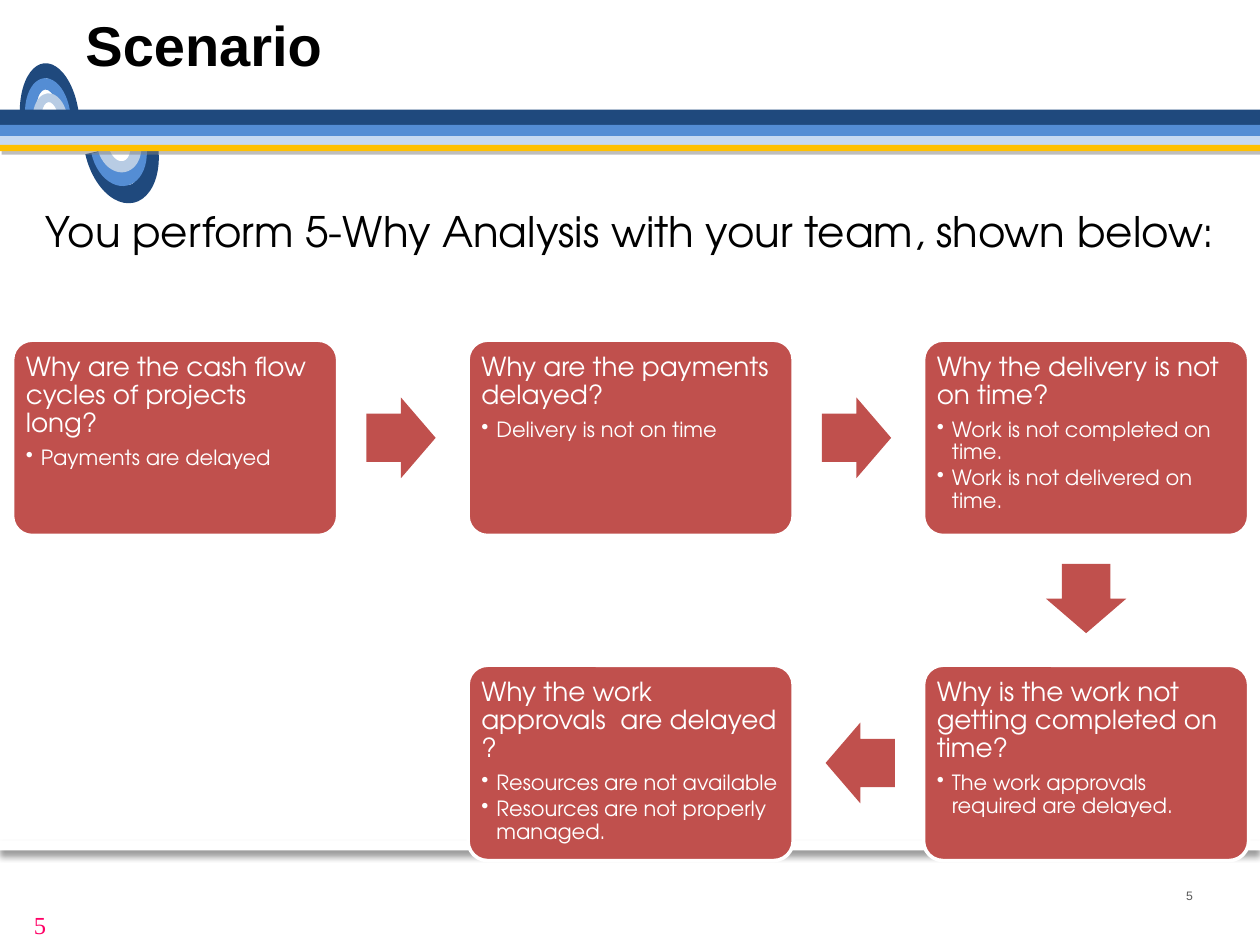
from dataclasses import dataclass

from lxml.etree import SubElement
from pptx import Presentation
from pptx.dml.color import RGBColor
from pptx.enum.shapes import MSO_SHAPE as Preset
from pptx.enum.text import MSO_ANCHOR as Anchor, PP_ALIGN as Align
from pptx.oxml.ns import qn
from pptx.util import Inches, Pt

COLUMNS, ROWS = 100, 75


@dataclass(frozen=True)
class Theme:
    heading: str = "Arial"
    body: str = "TeX Gyre Adventor"
    serif: str = "Times New Roman"
    black: str = "000000"
    white: str = "FFFFFF"
    grey: str = "595959"
    pink: str = "FF0066"
    red: str = "C0504D"
    navy: str = "1F497D"
    blue: str = "548DD4"
    mist: str = "B8CCE4"
    sky: str = "C6D9F1"
    gold: str = "FFC000"
    shade: str = "7F7F7F"
    title_size: int = 32
    lead_size: int = 24
    question_size: int = 15
    answer_size: int = 12
    page_size: int = 14
    number_size: int = 7


class SlideBuilder:
    def __init__(self, deck, theme):
        self.theme = theme
        self.column = deck.slide_width / COLUMNS
        self.row = deck.slide_height / ROWS
        self.slide = deck.slides.add_slide(deck.slide_layouts[6])

    def place(self, left, top, width, height):
        return (round(left * self.column), round(top * self.row),
                round(width * self.column), round(height * self.row))

    def style(self, paragraph, font, size, color, bold=False):
        paragraph.font.name = font
        paragraph.font.size = Pt(size)
        paragraph.font.bold = bold
        paragraph.font.color.rgb = RGBColor.from_string(color)

    def inset(self, frame, margin):
        frame.margin_left = frame.margin_right = margin
        frame.margin_top = frame.margin_bottom = margin

    def text(self, box, words, font, size, color, align=Align.LEFT,
             anchor=Anchor.TOP, bold=False, margin=None):
        frame = self.slide.shapes.add_textbox(*self.place(*box)).text_frame
        frame.word_wrap = True
        frame.vertical_anchor = anchor
        if margin is not None:
            self.inset(frame, margin)
        paragraph = frame.paragraphs[0]
        paragraph.text = words
        paragraph.alignment = align
        self.style(paragraph, font, size, color, bold)

    def shape(self, preset, box, color, rotation=0):
        shape = self.slide.shapes.add_shape(preset, *self.place(*box))
        shape.shadow.inherit = False
        shape.fill.solid()
        shape.fill.fore_color.rgb = RGBColor.from_string(color)
        shape.line.fill.background()
        shape.rotation = rotation
        return shape

    def band(self, top, height, color, shade, opacity, blur, distance, angle):
        band = self.shape(Preset.RECTANGLE, (0, top, COLUMNS, height), color)
        effects = band._element.spPr.find(qn("a:effectLst"))
        shadow = SubElement(effects, qn("a:outerShdw"), blurRad=str(Pt(blur)),
                            dist=str(Pt(distance)), dir=str(angle * 60000),
                            algn="t", rotWithShape="0")
        tint = SubElement(shadow, qn("a:srgbClr"), val=shade)
        SubElement(tint, qn("a:alpha"), val=str(opacity * 1000))

    def arcs(self, boxes, rotation):
        colors = self.theme.navy, self.theme.blue, self.theme.mist
        for box, color in zip(boxes, colors):
            self.shape(Preset.BLOCK_ARC, box, color, rotation)

    def bullet(self, paragraph):
        props = paragraph._p.get_or_add_pPr()
        props.set("marL", str(Inches(0.12)))
        props.set("indent", str(-Inches(0.12)))
        SubElement(props, qn("a:buChar"), char="•")

    def card(self, box, question, answers):
        theme = self.theme
        card = self.shape(Preset.ROUNDED_RECTANGLE, box, theme.red)
        card.adjustments[0] = 0.1
        card.line.color.rgb = RGBColor.from_string(theme.white)
        card.line.width = Pt(2)
        frame = card.text_frame
        frame.word_wrap = True
        frame.vertical_anchor = Anchor.TOP
        self.inset(frame, Inches(0.06))
        for index, words in enumerate([question, *answers]):
            paragraph = frame.add_paragraph() if index else frame.paragraphs[0]
            paragraph.text = words
            paragraph.alignment = Align.LEFT
            paragraph.line_spacing = 0.9
            paragraph.space_after = Pt(2 if index else 5)
            if index:
                self.bullet(paragraph)
            size = theme.answer_size if index else theme.question_size
            self.style(paragraph, theme.body, size, theme.white)

    def arrow(self, center, rotation):
        width, height = 5.5, 6.4
        box = (center[0] - width / 2, center[1] - height / 2, width, height)
        arrow = self.shape(Preset.RIGHT_ARROW, box, self.theme.red, rotation)
        arrow.adjustments[0] = 0.6
        arrow.adjustments[1] = 0.5


CARD_LEFT, CARD_TOP, CARD_WIDTH, CARD_HEIGHT = 1, 27, 25.8, 15.5
CARD_STEP, CARD_DROP = 36.15, 25.8
ARROW_SHIFT = 0.15
TURNS = {(1, 0): 0, (0, 1): 90, (-1, 0): 180}

WHYS = [
    ((0, 0), "Why are the cash flow cycles of projects long?",
     ["Payments are delayed"]),
    ((1, 0), "Why are the payments delayed?", ["Delivery is not on time"]),
    ((2, 0), "Why the delivery is not on time?",
     ["Work is not completed on time.", "Work is not delivered on time."]),
    ((2, 1), "Why is the work not getting completed on time?",
     ["The work approvals required are delayed."]),
    ((1, 1), "Why the work approvals  are delayed ?",
     ["Resources are not available", "Resources are not properly managed."]),
]


def card_box(cell):
    return (CARD_LEFT + cell[0] * CARD_STEP, CARD_TOP + cell[1] * CARD_DROP,
            CARD_WIDTH, CARD_HEIGHT)


def arrow_between(start, end):
    step = end[0] - start[0], end[1] - start[1]
    left, top, width, height = card_box(start)
    center = (left + width / 2 + step[0] * (CARD_STEP / 2 - ARROW_SHIFT),
              top + height / 2 + step[1] * (CARD_DROP / 2 - ARROW_SHIFT))
    return center, TURNS[step]


def main():
    deck = Presentation()
    deck.slide_width, deck.slide_height = Inches(10), Inches(7.5)
    theme = Theme()
    page = SlideBuilder(deck, theme)

    page.text((1.7, 71.7, 4.3, 3.4), "5", theme.serif, theme.page_size, theme.pink)
    page.arcs([(6.7, 7, 5.8, 9.2), (7.2, 8.6, 4.4, 6.2), (7.7, 9.1, 3.5, 4.6)], 167.3)
    page.arcs([(1.6, 5, 4.7, 9), (2, 6.2, 3.6, 6.1), (2.6, 7.4, 2.8, 4.5)], 354.3)
    for top, height, color in [(8.7, 1.6, theme.navy), (9.9, 0.9, theme.blue),
                               (10.8, 0.7, theme.sky), (11.5, 0.5, theme.gold)]:
        page.band(top, height, color, theme.shade, 50, 0, 2.2, 63)
    page.band(66.7, 0.8, theme.white, theme.black, 40, 4, 3, 90)
    page.text((93.8, 70.5, 1.2, 1.2), "5", theme.heading, theme.number_size,
              theme.grey, Align.CENTER, Anchor.MIDDLE, margin=0)
    page.text((5.8, 0, 94.2, 6.7), "Scenario", theme.heading, theme.title_size,
              theme.black, anchor=Anchor.BOTTOM, bold=True)
    page.text((0, 15.8, COLUMNS, 5),
              "You perform 5-Why Analysis with your team, shown below:",
              theme.body, theme.lead_size, theme.black, Align.CENTER)

    for cell, question, answers in WHYS:
        page.card(card_box(cell), question, answers)
    for (start, *_), (end, *_) in zip(WHYS, WHYS[1:]):
        page.arrow(*arrow_between(start, end))

    deck.save("out.pptx")


if __name__ == "__main__":
    main()
